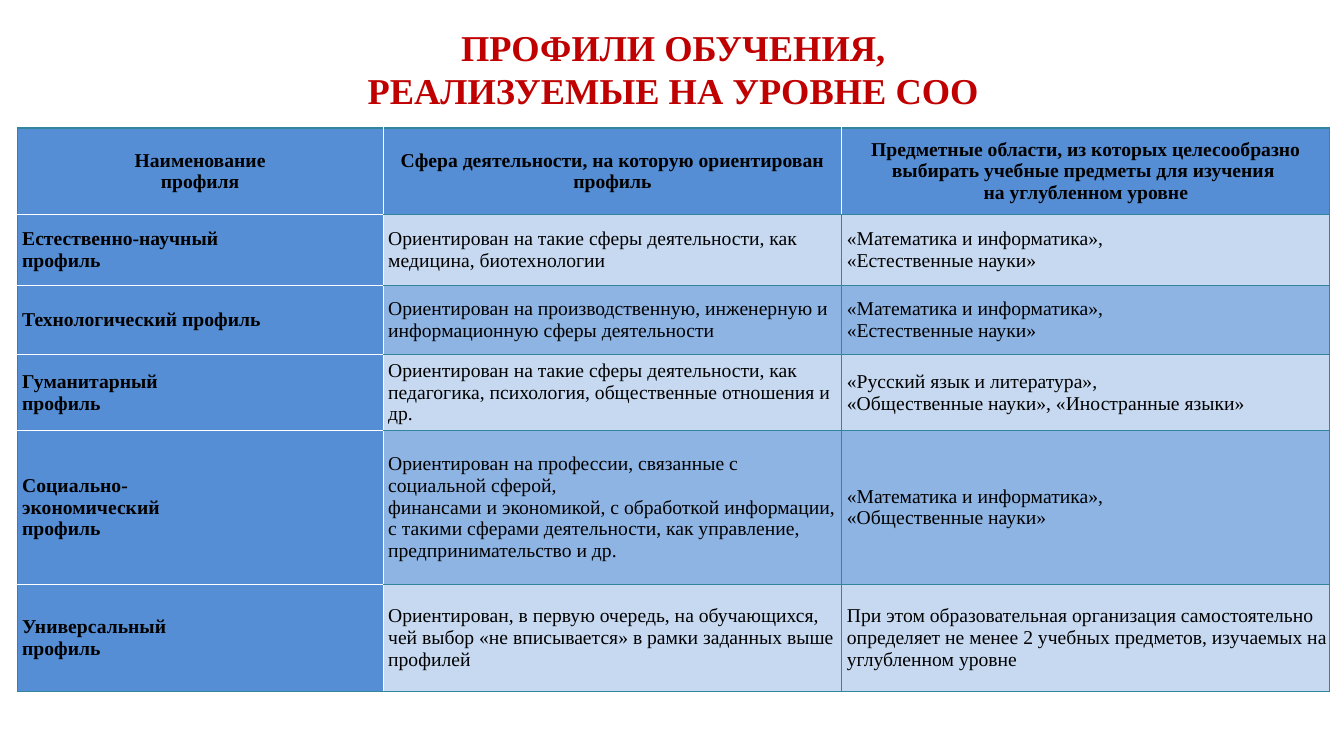
from pptx import Presentation
from pptx.dml.color import RGBColor
from pptx.enum.text import MSO_ANCHOR, MSO_AUTO_SIZE, PP_ALIGN
from pptx.oxml.ns import qn
from pptx.util import Inches, Pt
from lxml import etree

CENTER, LEFT = PP_ALIGN.CENTER, PP_ALIGN.LEFT
MIDDLE = MSO_ANCHOR.MIDDLE
NO_AUTOFIT = MSO_AUTO_SIZE.NONE

FONT = "Times New Roman"
RED, BLACK, WHITE, TEAL = "C00000", "000000", "FFFFFF", "31859C"
STRONG_BLUE, LIGHT_BLUE, MEDIUM_BLUE = "558ED5", "C6D9F1", "8EB4E3"
BORDER_WIDTH = Pt(0.96)

TITLE = "ПРОФИЛИ ОБУЧЕНИЯ,\vРЕАЛИЗУЕМЫЕ НА УРОВНЕ СОО"
TITLE_BOX = (0.68, 0.13, 12, 1.1)
TABLE_BOX = (0.17, 1.27, 13.02, 5.59)
COLUMN_WIDTHS = (3.63, 4.55, 4.84)
ROW_HEIGHTS = (0.86, 0.7, 0.69, 0.75, 1.53, 1.06)
PROFILES = [
    ("Наименование\nпрофиля",
     "Сфера деятельности, на которую ориентирован профиль",
     "Предметные области, из которых целесообразно выбирать учебные предметы "
     "для изучения \nна углубленном уровне"),
    ("Естественно-научный\nпрофиль",
     "Ориентирован на такие сферы деятельности, как медицина, биотехнологии",
     "«Математика и информатика»,\n«Естественные науки»"),
    ("Технологический профиль",
     "Ориентирован на производственную, инженерную и информационную сферы деятельности",
     "«Математика и информатика»,\n«Естественные науки»"),
    ("Гуманитарный\nпрофиль",
     "Ориентирован на такие сферы деятельности, как педагогика, психология, "
     "общественные отношения и др.",
     "«Русский язык и литература»,\n«Общественные науки», «Иностранные языки»"),
    ("Социально-\nэкономический\nпрофиль",
     "Ориентирован на профессии, связанные с социальной сферой,\n"
     "финансами и экономикой, с обработкой информации, с такими сферами "
     "деятельности, как управление, предпринимательство и др.",
     "«Математика и информатика»,\n«Общественные науки»"),
    ("Универсальный\nпрофиль",
     "Ориентирован, в первую очередь, на обучающихся, чей выбор «не вписывается» "
     "в рамки заданных выше профилей",
     "При этом образовательная организация самостоятельно определяет не менее "
     "2 учебных предметов, изучаемых на углубленном уровне"),
]


def color(value):
    return RGBColor.from_string(value)


def format_paragraph(paragraph, size, value, bold, alignment):
    paragraph.alignment = alignment
    font = paragraph.font
    font.name, font.size, font.bold = FONT, Pt(size), bold
    font.color.rgb = color(value)


def add_title(slide, box):
    title = slide.shapes.title
    title.left, title.top, title.width, title.height = map(Inches, box)
    frame = title.text_frame
    frame.text = TITLE
    frame.word_wrap = True
    frame.auto_size = NO_AUTOFIT
    frame.vertical_anchor = MIDDLE
    format_paragraph(frame.paragraphs[0], 26, RED, True, CENTER)


def border_colors(row, column):
    last_row = len(PROFILES) - 1
    left = TEAL if column == 0 or (column == 2 and row > 0) else WHITE
    right = TEAL if column == 2 or (column == 1 and row > 0) else WHITE
    top = WHITE if column == 0 and row > 0 else TEAL
    bottom = WHITE if column == 0 and row < last_row else TEAL
    return {"a:lnL": left, "a:lnR": right, "a:lnT": top, "a:lnB": bottom}


def set_borders(cell, borders):
    properties = cell._tc.get_or_add_tcPr()
    for position, (tag, value) in enumerate(borders.items()):
        line = etree.Element(qn(tag), w=str(BORDER_WIDTH))
        fill = etree.SubElement(line, qn("a:solidFill"))
        etree.SubElement(fill, qn("a:srgbClr"), val=value)
        properties.insert(position, line)


def fill_cell(cell, row, column):
    header = row == 0
    strong = header or column == 0
    cell.text = PROFILES[row][column]
    cell.vertical_anchor = MIDDLE
    cell.margin_left = cell.margin_right = Inches(0.01)
    cell.margin_top = cell.margin_bottom = Inches(0.05)
    cell.fill.solid()
    band = LIGHT_BLUE if row % 2 else MEDIUM_BLUE
    cell.fill.fore_color.rgb = color(STRONG_BLUE if strong else band)
    for paragraph in cell.text_frame.paragraphs:
        format_paragraph(paragraph, 14, BLACK, strong, CENTER if header else LEFT)
        if not header:
            paragraph._p.get_or_add_pPr().set("marL", str(Inches(0.04)))
    set_borders(cell, border_colors(row, column))


def add_profile_table(slide, box):
    table = slide.shapes.add_table(
        len(PROFILES), len(COLUMN_WIDTHS), *map(Inches, box)).table
    for column, share in zip(table.columns, COLUMN_WIDTHS):
        column.width = Inches(box[2] * share / sum(COLUMN_WIDTHS))
    for row, share in zip(table.rows, ROW_HEIGHTS):
        row.height = Inches(box[3] * share / sum(ROW_HEIGHTS))
    for row in range(len(PROFILES)):
        for column in range(len(COLUMN_WIDTHS)):
            fill_cell(table.cell(row, column), row, column)


def main():
    presentation = Presentation()
    presentation.slide_width = Inches(13.33)
    presentation.slide_height = Inches(7.5)
    slide = presentation.slides.add_slide(presentation.slide_layouts[5])
    add_title(slide, TITLE_BOX)
    add_profile_table(slide, TABLE_BOX)
    presentation.save("out.pptx")


if __name__ == "__main__":
    main()
